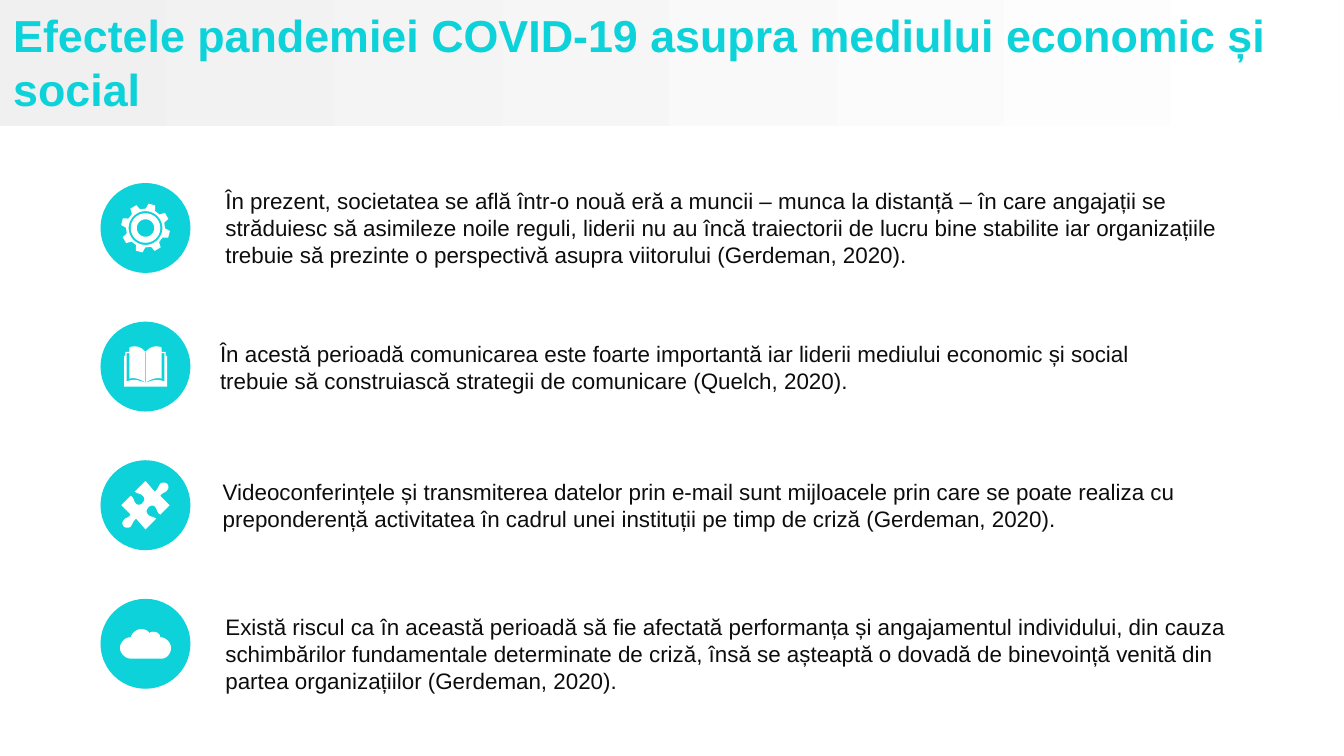
import math

import pptx
import pptx.dml.color
import pptx.enum.shapes
import pptx.enum.text
import pptx.util

Cm = pptx.util.Cm
TURQUOISE = pptx.dml.color.RGBColor(0x0D, 0xD2, 0xD9)
PALE_GREY = pptx.dml.color.RGBColor(0xF0, 0xF0, 0xF0)
WHITE = pptx.dml.color.RGBColor(0xFF, 0xFF, 0xFF)
INK = pptx.dml.color.RGBColor(0x0D, 0x0D, 0x0D)

ICON_UNIT = 0.0254
ICON_CENTRE = 2.75
FIRST_ROW = 4.31
ROW_STEP = 2.62
BADGE_SIZE = 1.7
CURVE_STEPS = 8

TITLE = "Efectele pandemiei COVID-19 asupra mediului economic și social"
ROWS = [
    (4.01, 3.4, 19.96, 1.8,
     "În prezent, societatea se află într-o nouă eră a muncii – munca la distanță – în care angajații se "
     "străduiesc să asimileze noile reguli, liderii nu au încă traiectorii de lucru bine stabilite iar "
     "organizațiile trebuie să prezinte o perspectivă asupra viitorului (Gerdeman, 2020)."),
    (3.91, 6.3, 19.08, 1.27,
     "În acestă perioadă comunicarea este foarte importantă iar liderii mediului economic și social "
     "trebuie să construiască strategii de comunicare (Quelch, 2020)."),
    (3.96, 8.92, 19.48, 1.27,
     "Videoconferințele și transmiterea datelor prin e-mail sunt mijloacele prin care se poate realiza cu "
     "preponderență activitatea în cadrul unei instituții pe timp de criză (Gerdeman, 2020)."),
    (4.01, 11.46, 19.96, 1.8,
     "Există riscul ca în această perioadă să fie afectată performanța și angajamentul individului, din cauza "
     "schimbărilor fundamentale determinate de criză, însă se așteaptă o dovadă de binevoință venită din "
     "partea organizațiilor (Gerdeman, 2020)."),
]


def trace(steps):
    """Turn line ends (x, y) and cubic curves (six numbers) into points."""
    points = []
    for step in steps:
        if len(step) == 2:
            points.append(step)
            continue
        start = points[-1]
        controls = [start, step[0:2], step[2:4], step[4:6]]
        for index in range(1, CURVE_STEPS + 1):
            t = index / CURVE_STEPS
            weights = [(1 - t) ** 3, 3 * t * (1 - t) ** 2, 3 * t * t * (1 - t), t ** 3]
            points.append(tuple(
                sum(weight * control[axis] for weight, control in zip(weights, controls))
                for axis in (0, 1)))
    return points


def polar(radius, degrees):
    angle = math.radians(degrees)
    return radius * math.cos(angle), radius * math.sin(angle)


def gear_contours():
    tooth = [(14.5, -14), (18.3, -8), (18.3, 8), (14.5, 14)]
    outline = [polar(radius, 45 * index - 75 + offset)
               for index in range(8) for radius, offset in tooth]
    rings = [[polar(radius, degrees) for degrees in range(0, 360, 10)]
             for radius in (12.6, 11, 6.5)]
    return [outline] + rings


def book_contours():
    half = trace([(0, -11), (3, -14, 5, -15, 8, -15), (9, -15, 11, -15, 12, -14),
                  (12, -11), (15, -11), (15, -8), (16, -8), (16, 15)])
    gap = trace([(12, -10), (14, -10), (14, 11), (8, 9, 6, 10, 0, 12), (4, 9, 9, 8, 12, 9)])
    spine = [(-0.2, -10.5), (0.2, -10.5), (0.2, 12), (-0.2, 12)]
    return [half + mirror(half)[::-1], gap, mirror(gap), spine]


def mirror(points):
    return [(-x, y) for x, y in points]


def puzzle_contours():
    half = trace([(16, -16), (17, -15, 18, -13, 16, -11), (15, -9, 13, -10, 11, -7),
                  (18, 0), (11, 7), (8, 5, 9, 3, 7, 1), (6, 0, 3, 0, 2, 2),
                  (1, 3, 0, 5, 2, 7), (4, 9, 5, 8, 8, 10), (0, 18), (-7, 10),
                  (-10, 13, -9, 13, -11, 16), (-12, 17, -15, 17, -16, 16)])
    return [half + [(-x, -y) for x, y in half]]


def cloud_contours():
    return [trace([(-3, -11), (-1, -11, 2, -10, 3, -8), (4, -9, 5, -9, 6, -9),
                   (9, -9, 11, -7, 11, -5), (15, -5, 19, -1, 19, 3),
                   (19, 7, 16, 11, 12, 11), (-11, 11), (-15, 11, -19, 7, -19, 3),
                   (-19, -1, -15, -5, -11, -5), (-10, -8, -7, -11, -3, -11)])]


def paint(shape, colour):
    shape.shadow.inherit = False
    shape.fill.solid()
    shape.fill.fore_color.rgb = colour
    shape.line.fill.background()


def add_title_band(page):
    band = page.shapes.add_shape(
        pptx.enum.shapes.MSO_SHAPE.RECTANGLE, 0, 0, Cm(25.3), Cm(2.39))
    band.shadow.inherit = False
    band.line.fill.background()
    band.fill.gradient()
    band.fill.gradient_angle = 0
    for stop, colour, position in zip(band.fill.gradient_stops, (PALE_GREY, WHITE), (0, 1)):
        stop.color.rgb = colour
        stop.position = position


def add_text(page, left, top, width, height, text, size, colour, bold=False):
    box = page.shapes.add_textbox(Cm(left), Cm(top), Cm(width), Cm(height))
    frame = box.text_frame
    frame.word_wrap = True
    frame.vertical_anchor = pptx.enum.text.MSO_ANCHOR.MIDDLE
    para = frame.paragraphs[0]
    para.text = text
    para.font.name = "Arial"
    para.font.size = pptx.util.Pt(size)
    para.font.bold = bold
    para.font.color.rgb = colour


def add_badge(page, centre_y):
    corner = BADGE_SIZE / 2
    badge = page.shapes.add_shape(
        pptx.enum.shapes.MSO_SHAPE.OVAL, Cm(ICON_CENTRE - corner), Cm(centre_y - corner),
        Cm(BADGE_SIZE), Cm(BADGE_SIZE))
    paint(badge, TURQUOISE)


def add_icon(page, centre_y, contours):
    placed = [[(Cm(ICON_CENTRE + x * ICON_UNIT), Cm(centre_y + y * ICON_UNIT))
               for x, y in contour] for contour in contours]
    builder = page.shapes.build_freeform(*placed[0][0])
    for index, contour in enumerate(placed):
        if index:
            builder.move_to(*contour[0])
        builder.add_line_segments(contour[1:], close=True)
    paint(builder.convert_to_shape(), WHITE)


def main():
    deck = pptx.Presentation()
    deck.slide_width, deck.slide_height = Cm(25.4), Cm(14.29)
    page = deck.slides.add_slide(deck.slide_layouts[6])
    add_title_band(page)
    add_text(page, 0, 0.08, 25.4, 2.16, TITLE, 24, TURQUOISE, bold=True)
    icons = [gear_contours(), book_contours(), puzzle_contours(), cloud_contours()]
    for index, (contours, row) in enumerate(zip(icons, ROWS)):
        centre_y = FIRST_ROW + index * ROW_STEP
        add_badge(page, centre_y)
        add_icon(page, centre_y, contours)
        add_text(page, *row, 12, INK)
    deck.save("out.pptx")


if __name__ == "__main__":
    main()
